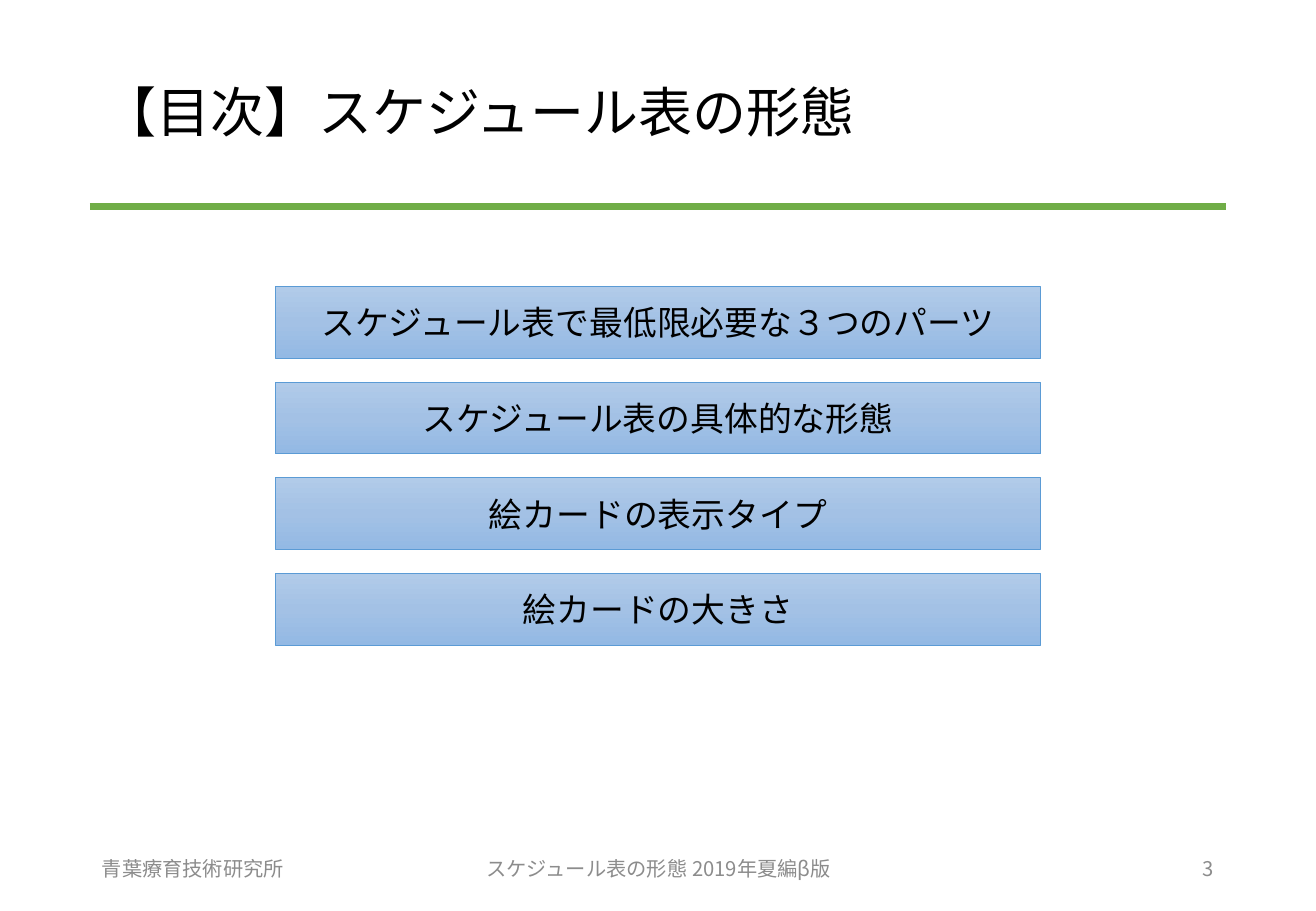
from copy import deepcopy
from dataclasses import dataclass

from lxml.etree import SubElement
from pptx import Presentation
from pptx.dml.color import RGBColor
from pptx.enum.shapes import MSO_CONNECTOR, MSO_SHAPE
from pptx.enum.text import MSO_ANCHOR, PP_ALIGN
from pptx.oxml.ns import qn
from pptx.util import Inches, Pt

TITLE = "【目次】スケジュール表の形態"
TOPICS = [
    "スケジュール表で最低限必要な３つのパーツ",
    "スケジュール表の具体的な形態",
    "絵カードの表示タイプ",
    "絵カードの大きさ",
]
# text, left, width, alignment
FOOTERS = [
    ("青葉療育技術研究所", 0.74, 2.44, PP_ALIGN.LEFT),
    ("スケジュール表の形態 2019年夏編β版", 3.59, 3.66, PP_ALIGN.CENTER),
    ("3", 7.65, 2.44, PP_ALIGN.RIGHT),
]


@dataclass(frozen=True)
class Theme:
    japanese_font: str = "Noto Sans CJK JP"
    latin_font: str = "Calibri"
    text: str = "000000"
    footer: str = "8C8C8C"
    rule: str = "70AD47"
    border: str = "5B9BD5"
    gradient: tuple = ("B1CBE9", "A3C1E5", "93B9E4")
    title_size: int = 32
    topic_size: int = 20
    footer_size: int = 12


THEME = Theme()
SLIDE_WIDTH, SLIDE_HEIGHT = 10.83, 7.5
MARGIN, CONTENT_WIDTH = 0.74, 9.35
RULE_TOP = 1.7
TOPIC_TOP, TOPIC_PITCH = 2.36, 0.787
TOPIC_WIDTH, TOPIC_HEIGHT = 6.3, 0.59
FOOTER_TOP, FOOTER_HEIGHT = 6.95, 0.4


def rgb(color):
    return RGBColor.from_string(color)


def write(shape, text, size, color, alignment, latin_font=THEME.japanese_font):
    frame = shape.text_frame
    frame.text = text
    frame.word_wrap = True
    frame.vertical_anchor = MSO_ANCHOR.MIDDLE
    paragraph = frame.paragraphs[0]
    paragraph.alignment = alignment
    for run in paragraph.runs:
        run.font.size = Pt(size)
        run.font.color.rgb = rgb(color)
        run.font.name = latin_font
        east_asian = SubElement(run.font._element, qn("a:ea"))
        east_asian.set("typeface", THEME.japanese_font)


def fill_gradient(shape, colors):
    """Fill from top to bottom with three evenly spaced colours."""
    shape.fill.gradient()
    shape.fill.gradient_angle = 270
    stop_list = shape._element.spPr.find(qn("a:gradFill")).find(qn("a:gsLst"))
    stop_list.insert(1, deepcopy(stop_list[0]))
    for index, (stop, color) in enumerate(zip(shape.fill.gradient_stops, colors)):
        stop.color.rgb = rgb(color)
        stop.position = index / (len(colors) - 1)


def add_title(slide):
    title = slide.shapes.title
    title.left, title.top = Inches(MARGIN), Inches(0.4)
    title.width, title.height = Inches(CONTENT_WIDTH), Inches(1.02)
    write(title, TITLE, THEME.title_size, THEME.text, PP_ALIGN.LEFT)


def add_rule(slide):
    rule = slide.shapes.add_connector(
        MSO_CONNECTOR.STRAIGHT, Inches(MARGIN), Inches(RULE_TOP),
        Inches(MARGIN + CONTENT_WIDTH), Inches(RULE_TOP))
    rule.line.color.rgb = rgb(THEME.rule)
    rule.line.width = Pt(4.5)
    SubElement(rule._element.spPr, qn("a:effectLst"))


def add_topics(slide):
    left = (SLIDE_WIDTH - TOPIC_WIDTH) / 2
    for index, topic in enumerate(TOPICS):
        box = slide.shapes.add_shape(
            MSO_SHAPE.RECTANGLE, Inches(left), Inches(TOPIC_TOP + index * TOPIC_PITCH),
            Inches(TOPIC_WIDTH), Inches(TOPIC_HEIGHT))
        box.shadow.inherit = False
        fill_gradient(box, THEME.gradient)
        box.line.color.rgb = rgb(THEME.border)
        box.line.width = Pt(0.5)
        write(box, topic, THEME.topic_size, THEME.text, PP_ALIGN.CENTER, THEME.latin_font)


def add_footers(slide):
    for text, left, width, alignment in FOOTERS:
        box = slide.shapes.add_textbox(
            Inches(left), Inches(FOOTER_TOP), Inches(width), Inches(FOOTER_HEIGHT))
        write(box, text, THEME.footer_size, THEME.footer, alignment)


def main():
    presentation = Presentation()
    presentation.slide_width = Inches(SLIDE_WIDTH)
    presentation.slide_height = Inches(SLIDE_HEIGHT)
    slide = presentation.slides.add_slide(presentation.slide_layouts.get_by_name("Title Only"))
    add_title(slide)
    add_rule(slide)
    add_topics(slide)
    add_footers(slide)
    presentation.save("out.pptx")


if __name__ == "__main__":
    main()
